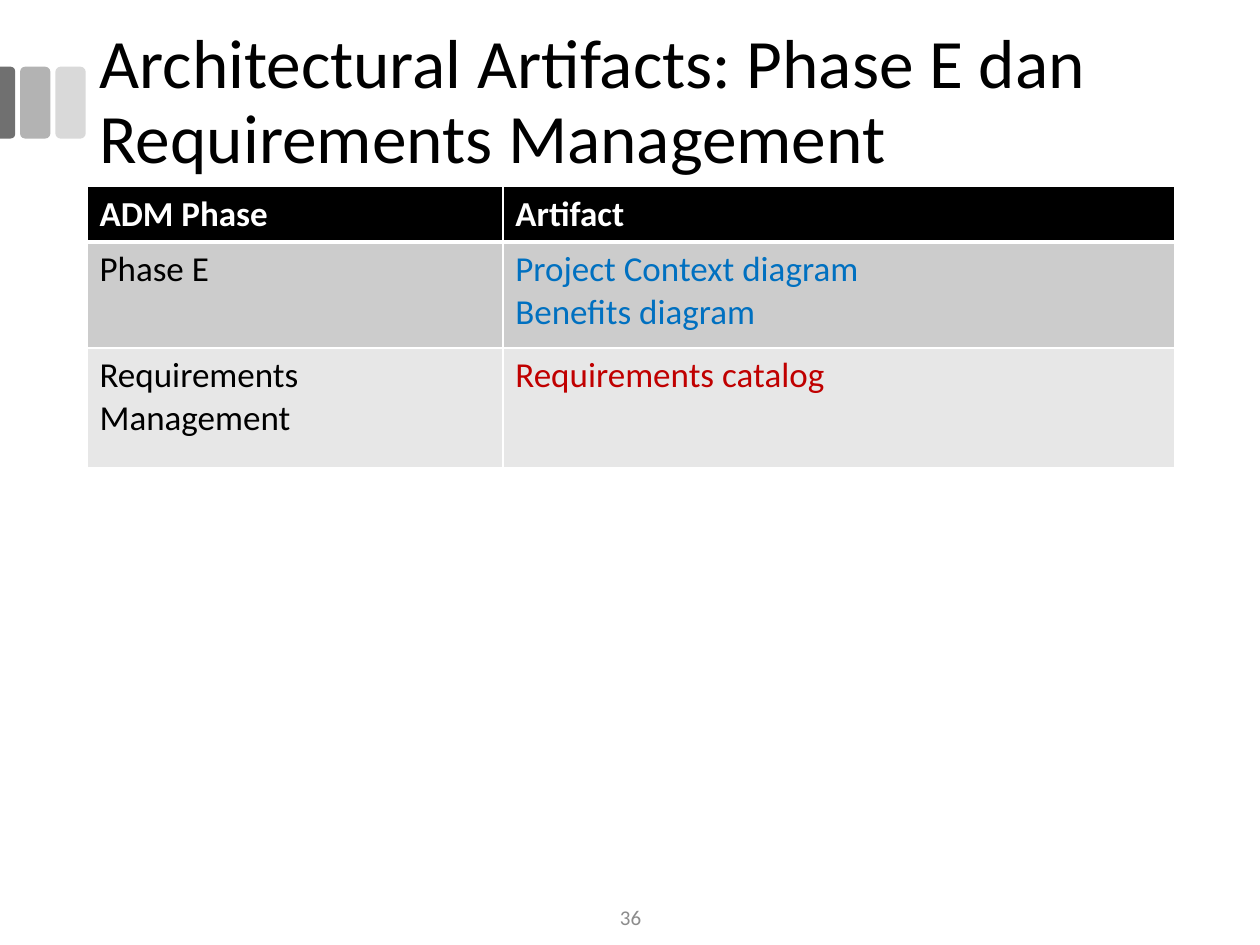
from lxml.etree import SubElement
from pptx import Presentation
from pptx.dml.color import RGBColor
from pptx.enum.shapes import MSO_SHAPE
from pptx.enum.text import MSO_ANCHOR, MSO_AUTO_SIZE, PP_ALIGN
from pptx.oxml.ns import qn
from pptx.util import Inches, Pt

FONT = "Calibri"
COLORS = {
    "black": "000000",
    "white": "FFFFFF",
    "blue": "0070C0",
    "red": "C00000",
    "page": "8C8C8C",
    "row_dark": "CCCCCC",
    "row_light": "E7E7E7",
    "bar_light": "D9D9D9",
    "bar_mid": "B3B3B3",
    "bar_dark": "707070",
}
COLUMN_WIDTHS = [3.3, 5.33]
# Each row: height, fill, bold, then (lines, text colour) for each cell
ROWS = [
    (0.43, "black", True, [(["ADM Phase"], "white"), (["Artifact"], "white")]),
    (0.84, "row_dark", False, [
        (["Phase E"], "black"),
        (["Project Context diagram", "Benefits diagram"], "blue"),
    ]),
    (0.95, "row_light", False, [
        (["Requirements Management"], "black"),
        (["Requirements catalog"], "red"),
    ]),
]


def rgb(name):
    return RGBColor.from_string(COLORS[name])


def add_run(paragraph, text, size, color, bold=False):
    run = paragraph.add_run()
    run.text = text
    run.font.name = FONT
    run.font.size = Pt(size)
    run.font.bold = bold
    run.font.color.rgb = rgb(color)


def add_bar(slide, preset, color, left, top, width, height):
    bar = slide.shapes.add_shape(
        preset, Inches(left), Inches(top), Inches(width), Inches(height))
    bar.shadow.inherit = False
    bar.fill.solid()
    bar.fill.fore_color.rgb = rgb(color)
    bar.line.fill.background()
    return bar


def add_side_bars(slide, left, top, height):
    """Two rounded bars and a half bar that meets the slide's left edge."""
    edge_width, width, pitch = 0.12, 0.24, 0.28
    for index, color in enumerate(["bar_mid", "bar_light"]):
        add_bar(slide, MSO_SHAPE.ROUNDED_RECTANGLE, color,
                left + 0.16 + index * pitch, top, width, height)
    # Turned a quarter, so its width runs down the slide
    edge = add_bar(slide, MSO_SHAPE.ROUND_2_SAME_RECTANGLE, "bar_dark",
                   left + (edge_width - height) / 2,
                   top + (height - edge_width) / 2, height, edge_width)
    edge.rotation = 90
    edge.adjustments[0] = 0.292


def place_title(slide, left, top, width, height):
    title = slide.shapes.title
    title.left, title.top = Inches(left), Inches(top)
    title.width, title.height = Inches(width), Inches(height)
    frame = title.text_frame
    frame.word_wrap = True
    frame.auto_size = MSO_AUTO_SIZE.NONE
    frame.vertical_anchor = MSO_ANCHOR.MIDDLE
    paragraph = frame.paragraphs[0]
    paragraph.alignment = PP_ALIGN.LEFT
    paragraph.line_spacing = 0.9
    add_run(paragraph, "Architectural Artifacts: Phase E dan Requirements Management",
            39.6, "black")


def set_borders(cell, widths):
    properties = cell._tc.get_or_add_tcPr()
    for side, points in widths.items():
        line = SubElement(properties, qn(f"a:ln{side}"), w=str(Pt(points)))
        fill = SubElement(line, qn("a:solidFill"))
        SubElement(fill, qn("a:srgbClr"), val=COLORS["white"])


def add_artifact_table(slide, left, top):
    width, height = sum(COLUMN_WIDTHS), sum(row[0] for row in ROWS)
    table = slide.shapes.add_table(
        len(ROWS), len(COLUMN_WIDTHS), Inches(left), Inches(top),
        Inches(width), Inches(height)).table
    for column, column_width in zip(table.columns, COLUMN_WIDTHS):
        column.width = Inches(column_width)
    for r, (row_height, fill, bold, contents) in enumerate(ROWS):
        table.rows[r].height = Inches(row_height)
        for c, (lines, color) in enumerate(contents):
            cell = table.cell(r, c)
            set_borders(cell, {"L": 1, "R": 1, "T": 3 if r == 1 else 1,
                               "B": 3 if r == 0 else 1})
            cell.fill.solid()
            cell.fill.fore_color.rgb = rgb(fill)
            frame = cell.text_frame
            for i, line in enumerate(lines):
                paragraph = frame.add_paragraph() if i else frame.paragraphs[0]
                add_run(paragraph, line, 20, color, bold)


def add_page_number(slide, left, top, width, height):
    frame = slide.shapes.add_textbox(
        Inches(left), Inches(top), Inches(width), Inches(height)).text_frame
    frame.word_wrap = True
    frame.vertical_anchor = MSO_ANCHOR.MIDDLE
    paragraph = frame.paragraphs[0]
    paragraph.alignment = PP_ALIGN.CENTER
    add_run(paragraph, "36", 12, "page")


def main():
    presentation = Presentation()
    presentation.slide_width = Inches(10)
    presentation.slide_height = Inches(7.5)
    slide = presentation.slides.add_slide(presentation.slide_layouts[5])
    add_side_bars(slide, 0, 0.53, 0.57)
    place_title(slide, 0.69, 0.17, 8.62, 1.31)
    add_artifact_table(slide, 0.69, 1.48)
    add_page_number(slide, 3.88, 7.08, 2.25, 0.4)
    presentation.save("out.pptx")


if __name__ == "__main__":
    main()
